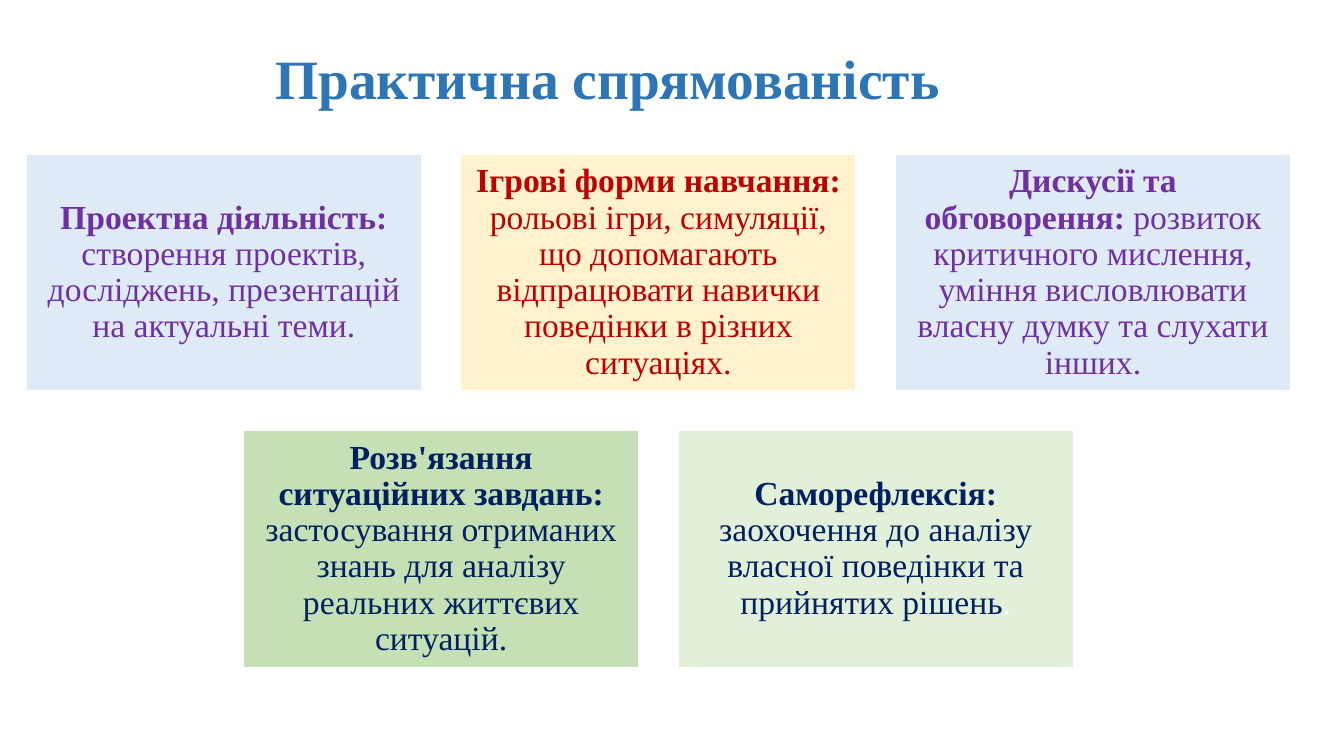
"""Build the slide on practical orientation: a title and five cards in two centred rows."""
import pptx
import pptx.util
import pptx.dml.color
import pptx.enum.shapes
import pptx.enum.text

Inches, Pt = pptx.util.Inches, pptx.util.Pt
RGB = pptx.dml.color.RGBColor.from_string
FONT = "Times New Roman"
COLORS = {
    "title": "2E75B6", "white": "FFFFFF",
    "purple": "7030A0", "red": "C00000", "navy": "002060",
    "blue": "DEEBF7", "yellow": "FFF2CC", "green": "C5E0B4", "pale green": "E2F0D9",
}
CARD_ROWS = [
    [
        ("blue", "purple", "Проектна діяльність:",
         " створення проектів, досліджень, презентацій на актуальні теми.", ""),
        ("yellow", "red", "Ігрові форми навчання:",
         " рольові ігри, симуляції, що допомагають відпрацювати навички поведінки в різних ситуаціях.", ""),
        ("blue", "purple", "Дискусії та обговорення:",
         " розвиток критичного мислення, уміння висловлювати власну думку та слухати інших.", ""),
    ],
    [
        ("green", "navy", "Розв'язання ситуаційних завдань:",
         " застосування отриманих знань для аналізу реальних життєвих ситуацій.", ""),
        ("pale green", "navy", "Саморефлексія:",
         " заохочення до аналізу власної поведінки та прийнятих рішень", "."),
    ],
]
CARD_WIDTH, CARD_HEIGHT, GAP = 3.92, 2.35, 0.39
CENTER, TOP = 6.53, 1.53

presentation = pptx.Presentation()
presentation.slide_width, presentation.slide_height = Inches(13.33), Inches(7.5)
slide = presentation.slides.add_slide(presentation.slide_layouts[6])

title = slide.shapes.add_textbox(Inches(2.63), Inches(0.17), Inches(9.79), Inches(1.2)).text_frame
title.word_wrap = True
title.vertical_anchor = pptx.enum.text.MSO_ANCHOR.MIDDLE
heading = title.paragraphs[0]
heading.text = "Практична спрямованість"
heading.font.name, heading.font.size, heading.font.bold = FONT, Pt(39.6), True
heading.font.color.rgb = RGB(COLORS["title"])

for row, cards in enumerate(CARD_ROWS):
    row_width = len(cards) * (CARD_WIDTH + GAP) - GAP
    top = TOP + row * (CARD_HEIGHT + GAP)
    for column, (fill, ink, topic, details, ending) in enumerate(cards):
        left = CENTER - row_width / 2 + column * (CARD_WIDTH + GAP)
        card = slide.shapes.add_shape(
            pptx.enum.shapes.MSO_SHAPE.RECTANGLE,
            Inches(left), Inches(top), Inches(CARD_WIDTH), Inches(CARD_HEIGHT))
        card.shadow.inherit = False
        card.fill.solid()
        card.fill.fore_color.rgb = RGB(COLORS[fill])
        card.line.color.rgb = RGB(COLORS["white"])
        card.line.width = Pt(1)

        frame = card.text_frame
        frame.word_wrap = True
        frame.vertical_anchor = pptx.enum.text.MSO_ANCHOR.MIDDLE
        frame.margin_left = frame.margin_right = Inches(0.1)
        frame.margin_top = frame.margin_bottom = Inches(0.1)
        paragraph = frame.paragraphs[0]
        paragraph.alignment = pptx.enum.text.PP_ALIGN.CENTER
        paragraph.line_spacing = 0.9
        paragraph.font.name, paragraph.font.size = FONT, Pt(24)
        for text, bold, color in ((topic, True, ink), (details, False, ink), (ending, False, "white")):
            if text:
                run = paragraph.add_run()
                run.text = text
                run.font.bold = bold
                run.font.color.rgb = RGB(COLORS[color])

presentation.save("out.pptx")
